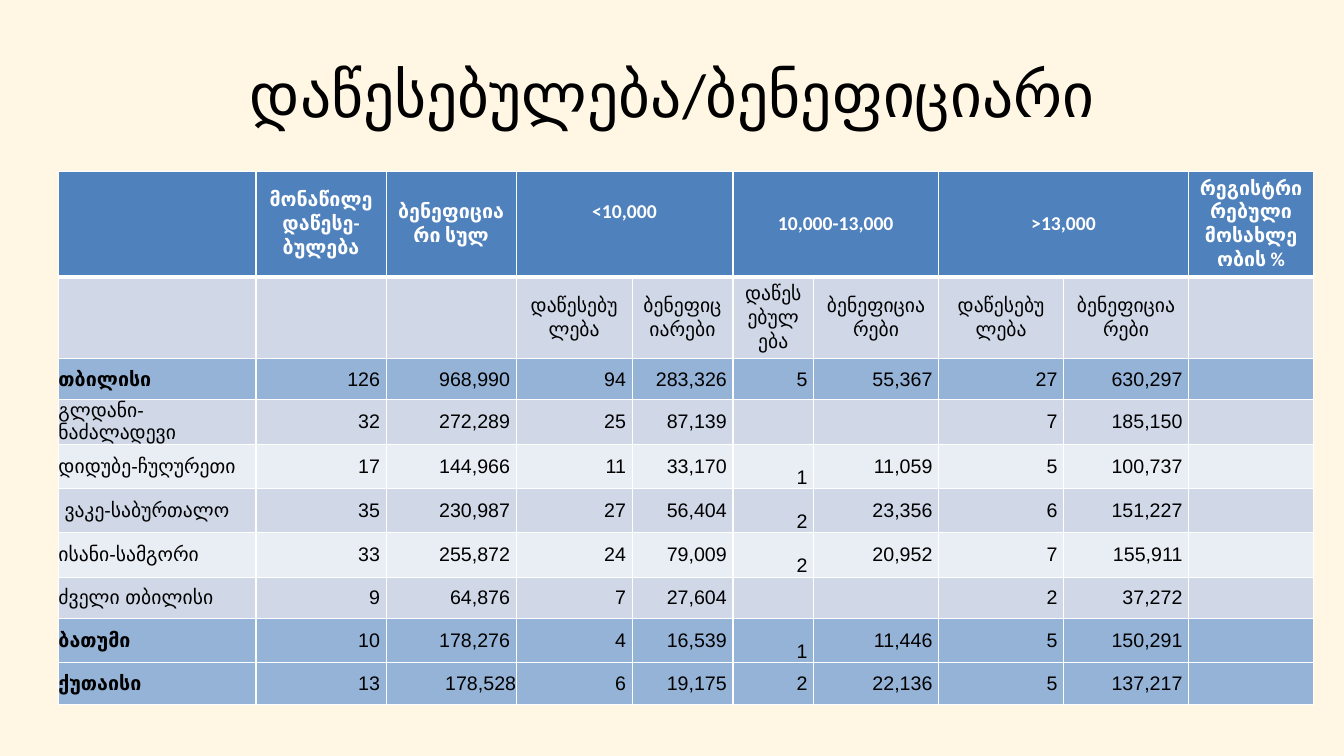
"""Builds the slide with the table of institutions and beneficiaries."""
from lxml import etree
from pptx import Presentation
from pptx.dml.color import RGBColor
from pptx.enum.text import MSO_ANCHOR, PP_ALIGN
from pptx.oxml.ns import qn
from pptx.util import Inches, Pt

LEFT, CENTER, RIGHT = PP_ALIGN.LEFT, PP_ALIGN.CENTER, PP_ALIGN.RIGHT
MIDDLE = MSO_ANCHOR.MIDDLE

CREAM = RGBColor(0xFF, 0xF6, 0xE3)
WHITE = RGBColor(0xFF, 0xFF, 0xFF)
BLACK = RGBColor(0x00, 0x00, 0x00)
HEADER_BLUE = RGBColor(0x4F, 0x81, 0xBD)
CITY_BLUE = RGBColor(0x95, 0xB3, 0xD7)
BAND_DARK = RGBColor(0xD0, 0xD8, 0xE8)
BAND_LIGHT = RGBColor(0xE9, 0xED, 0xF4)

CELL_INSETS = (0.1, 0.05, 0.1, 0.05)
NAME_INSETS = (0, 0, 0, 0)
INDENTED_INSETS = (0.06, 0, 0, 0)
NUMBER_INSETS = (0, 0, 0.06, 0)
LOWERED_INSETS = (0, 0.22, 0.06, 0)
RAISED_INSETS = (0.1, 0.05, 0.1, 0.29)

COLUMN_WIDTHS = [1.96, 1.29, 1.29, 1.15, 1, 0.8, 1.24, 1.24, 1.24, 1.24]
ROW_HEIGHTS = [1.04, 0.8, 0.41, 0.44, 0.44, 0.44, 0.44, 0.41, 0.44, 0.41]
HEADERS = ["", "მონაწილე დაწესე-ბულება", "ბენეფიციარი სულ", "<10,000", "",
           "10,000-13,000", "", ">13,000", "", "რეგისტრირებული მოსახლეობის %"]
SUBHEADERS = ["", "", ""] + ["დაწესებულება", "ბენეფიციარები"] * 3 + [""]
GROUP_COLUMNS = (3, 5, 7)
CITIES = ("თბილისი", "ბათუმი", "ქუთაისი")
INDENTED_NAME = "ვაკე-საბურთალო"
FLUSH_NUMBER = "178,528"
NARROW_COLUMN = 5
LOWERED_ROWS = (4, 5, 6, 8)
RECORDS = [
    ["თბილისი", "126", "968,990", "94", "283,326", "5", "55,367", "27", "630,297", ""],
    ["გლდანი-ნაძალადევი", "32", "272,289", "25", "87,139", "", "", "7", "185,150", ""],
    ["დიდუბე-ჩუღურეთი", "17", "144,966", "11", "33,170", "1", "11,059", "5", "100,737", ""],
    ["ვაკე-საბურთალო", "35", "230,987", "27", "56,404", "2", "23,356", "6", "151,227", ""],
    ["ისანი-სამგორი", "33", "255,872", "24", "79,009", "2", "20,952", "7", "155,911", ""],
    ["ძველი თბილისი", "9", "64,876", "7", "27,604", "", "", "2", "37,272", ""],
    ["ბათუმი", "10", "178,276", "4", "16,539", "1", "11,446", "5", "150,291", ""],
    ["ქუთაისი", "13", "178,528", "6", "19,175", "2", "22,136", "5", "137,217", ""],
]


class SlideBuilder:
    """Holds the text style and the current slide."""

    heading_font = "Calibri"
    body_font = "Arial"
    title_size = 44
    table_size = 14

    def __init__(self, page):
        """Keeps the slide and paints its background."""
        self.page = page
        page.background.fill.solid()
        page.background.fill.fore_color.rgb = CREAM

    def add_span(self, para, text, font, size, color=BLACK, bold=False, align=CENTER):
        """Adds one formatted run to a paragraph."""
        para.alignment = align
        span = para.add_run()
        span.text = text
        span.font.name = font
        span.font.size = Pt(size)
        span.font.bold = bold
        span.font.color.rgb = color

    def title(self, text, left, top, width, height):
        """Places and fills the title placeholder."""
        box = self.page.shapes.title
        box.left, box.top = Inches(left), Inches(top)
        box.width, box.height = Inches(width), Inches(height)
        box.text_frame.vertical_anchor = MIDDLE
        self.add_span(box.text_frame.paragraphs[0], text, self.heading_font, self.title_size)

    def table(self, left, top, widths, heights):
        """Adds a plain table with the given column widths and row heights."""
        frame = self.page.shapes.add_table(
            len(heights), len(widths), Inches(left), Inches(top),
            Inches(sum(widths)), Inches(sum(heights)))
        grid = frame.table
        grid.first_row = grid.horz_banding = False
        for column, width in zip(grid.columns, widths):
            column.width = Inches(width)
        for row, height in zip(grid.rows, heights):
            row.height = Inches(height)
        return grid

    def borders(self, cell, top=1, bottom=1):
        """Draws white lines around a cell."""
        properties = cell._tc.get_or_add_tcPr()
        for side, width in (("L", 1), ("R", 1), ("T", top), ("B", bottom)):
            line = etree.SubElement(properties, qn(f"a:ln{side}"), w=str(Pt(width)))
            solid = etree.SubElement(line, qn("a:solidFill"))
            etree.SubElement(solid, qn("a:srgbClr"), val=str(WHITE))

    def cell(self, cell, text, fill, insets, font, **style):
        """Fills a cell and adds its text."""
        cell.fill.solid()
        cell.fill.fore_color.rgb = fill
        if text:
            cell.vertical_anchor = MIDDLE
            (cell.margin_left, cell.margin_top,
             cell.margin_right, cell.margin_bottom) = map(Inches, insets)
            self.add_span(cell.text_frame.paragraphs[0], text, font, self.table_size, **style)

    def header_rows(self, grid):
        """Fills the two heading rows and joins the group headings."""
        for column, (header, subheader) in enumerate(zip(HEADERS, SUBHEADERS)):
            upper, lower = grid.cell(0, column), grid.cell(1, column)
            self.borders(upper, bottom=3)
            self.borders(lower, top=3)
            insets = RAISED_INSETS if header == "<10,000" else CELL_INSETS
            self.cell(upper, header, HEADER_BLUE, insets, self.heading_font,
                      color=WHITE, bold=True)
            self.cell(lower, subheader, BAND_DARK, CELL_INSETS, self.heading_font)
        for column in GROUP_COLUMNS:
            grid.cell(0, column).merge(grid.cell(0, column + 1))

    def record_row(self, grid, row, record):
        """Fills the row of one city or district with its numbers."""
        city = record[0] in CITIES
        fill = CITY_BLUE if city else (BAND_LIGHT if row % 2 == 0 else BAND_DARK)
        for column, text in enumerate(record):
            cell = grid.cell(row, column)
            self.borders(cell)
            if column == 0:
                insets = INDENTED_INSETS if text == INDENTED_NAME else NAME_INSETS
            elif column == NARROW_COLUMN and row in LOWERED_ROWS:
                insets = LOWERED_INSETS
            else:
                insets = NAME_INSETS if text == FLUSH_NUMBER else NUMBER_INSETS
            self.cell(cell, text, fill, insets, self.body_font,
                      bold=city and column == 0, align=RIGHT if column else LEFT)


def main():
    """Builds and saves the deck."""
    deck = Presentation()
    deck.slide_width, deck.slide_height = Inches(13.33), Inches(7.5)
    builder = SlideBuilder(deck.slides.add_slide(deck.slide_layouts[5]))
    builder.title("დაწესებულება/ბენეფიციარი", 0.67, 0.3, 12, 1.25)
    grid = builder.table(0.58, 1.7, COLUMN_WIDTHS, ROW_HEIGHTS)
    builder.header_rows(grid)
    for row, record in enumerate(RECORDS, start=2):
        builder.record_row(grid, row, record)
    deck.save("out.pptx")


if __name__ == "__main__":
    main()
